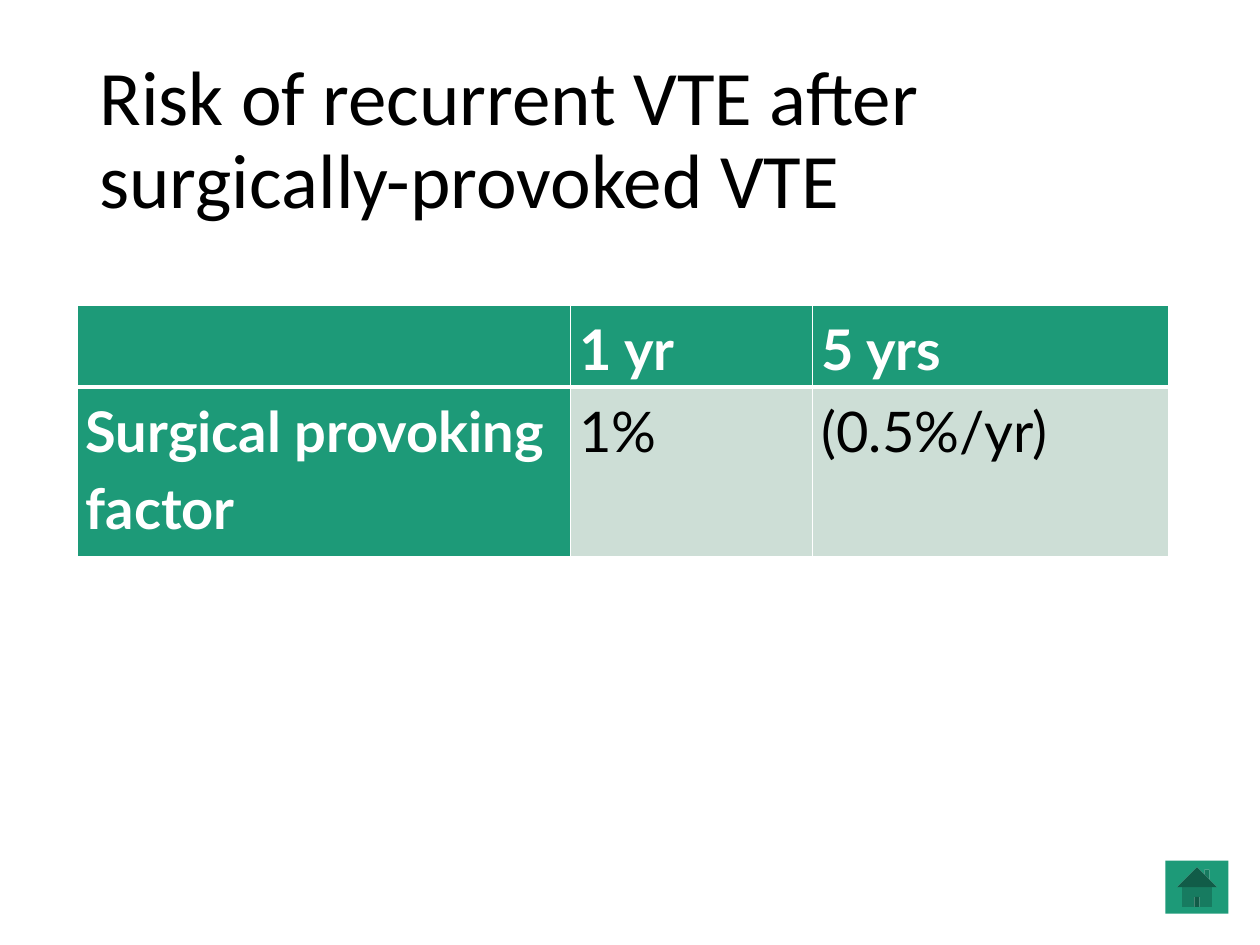
"""Build a slide on the risk of recurrent VTE after surgically-provoked VTE."""
import pptx
import pptx.dml.color
import pptx.enum.shapes
import pptx.enum.text
import pptx.oxml
import pptx.oxml.ns
import pptx.util

GREEN = pptx.dml.color.RGBColor(0x1D, 0x9A, 0x78)
PALE = pptx.dml.color.RGBColor(0xCD, 0xDE, 0xD6)
WHITE = pptx.dml.color.RGBColor(0xFF, 0xFF, 0xFF)
BLACK = pptx.dml.color.RGBColor(0, 0, 0)


def add_borders(cell, bottom_points):
    widths = {"lnL": 1, "lnR": 1, "lnT": 1, "lnB": bottom_points}
    for position, (side, points) in enumerate(widths.items()):
        border = pptx.oxml.parse_xml(
            f'<a:{side} {pptx.oxml.ns.nsdecls("a")} w="{pptx.util.Pt(points)}">'
            f'<a:solidFill><a:srgbClr val="{WHITE}"/></a:solidFill></a:{side}>'
        )
        cell._tc.get_or_add_tcPr().insert(position, border)


deck = pptx.Presentation()
deck.slide_width = pptx.util.Inches(10)
deck.slide_height = pptx.util.Inches(7.5)
slide = deck.slides.add_slide(deck.slide_layouts[6])

home = slide.shapes.add_shape(
    pptx.enum.shapes.MSO_SHAPE.ACTION_BUTTON_HOME,
    pptx.util.Inches(9.25), pptx.util.Inches(6.83),
    pptx.util.Inches(0.5), pptx.util.Inches(0.42),
)
home.shadow.inherit = False
home.fill.solid()
home.fill.fore_color.rgb = GREEN
home.line.fill.background()

heading = slide.shapes.add_textbox(
    pptx.util.Inches(0.69), pptx.util.Inches(0.4),
    pptx.util.Inches(8.62), pptx.util.Inches(1.45),
).text_frame
heading.word_wrap = True
heading.vertical_anchor = pptx.enum.text.MSO_ANCHOR.MIDDLE
heading.text = "Risk of recurrent VTE after surgically-provoked VTE"
title = heading.paragraphs[0]
title.line_spacing = 0.9
title.font.size = pptx.util.Pt(44)
title.font.name = "Calibri"
title.font.color.rgb = BLACK

risks = [
    ["", "1 yr", "5 yrs"],
    ["Surgical provoking factor", "1%", "(0.5%/yr)"],
]
column_widths = [3.92, 1.92, 2.83]
row_heights = [0.65, 1.35]
risk_table = slide.shapes.add_table(
    len(row_heights), len(column_widths),
    pptx.util.Inches(0.61), pptx.util.Inches(2.42),
    pptx.util.Inches(sum(column_widths)), pptx.util.Inches(sum(row_heights)),
).table
risk_table.first_col = True
for column, width in zip(risk_table.columns, column_widths):
    column.width = pptx.util.Inches(width)
for row, height in zip(risk_table.rows, row_heights):
    row.height = pptx.util.Inches(height)

for row_index, labels in enumerate(risks):
    for column_index, label in enumerate(labels):
        is_header = row_index == 0 or column_index == 0
        cell = risk_table.cell(row_index, column_index)
        cell.fill.solid()
        cell.fill.fore_color.rgb = GREEN if is_header else PALE
        add_borders(cell, 3 if row_index == 0 else 1)
        cell.margin_left = cell.margin_right = pptx.util.Inches(0.07)
        cell.margin_top = cell.margin_bottom = 0
        cell.text = label
        entry = cell.text_frame.paragraphs[0]
        entry.line_spacing = 1.15
        entry.font.size = pptx.util.Pt(32)
        entry.font.name = "Lato"
        entry.font.bold = is_header
        entry.font.color.rgb = WHITE if is_header else BLACK

deck.save("out.pptx")
